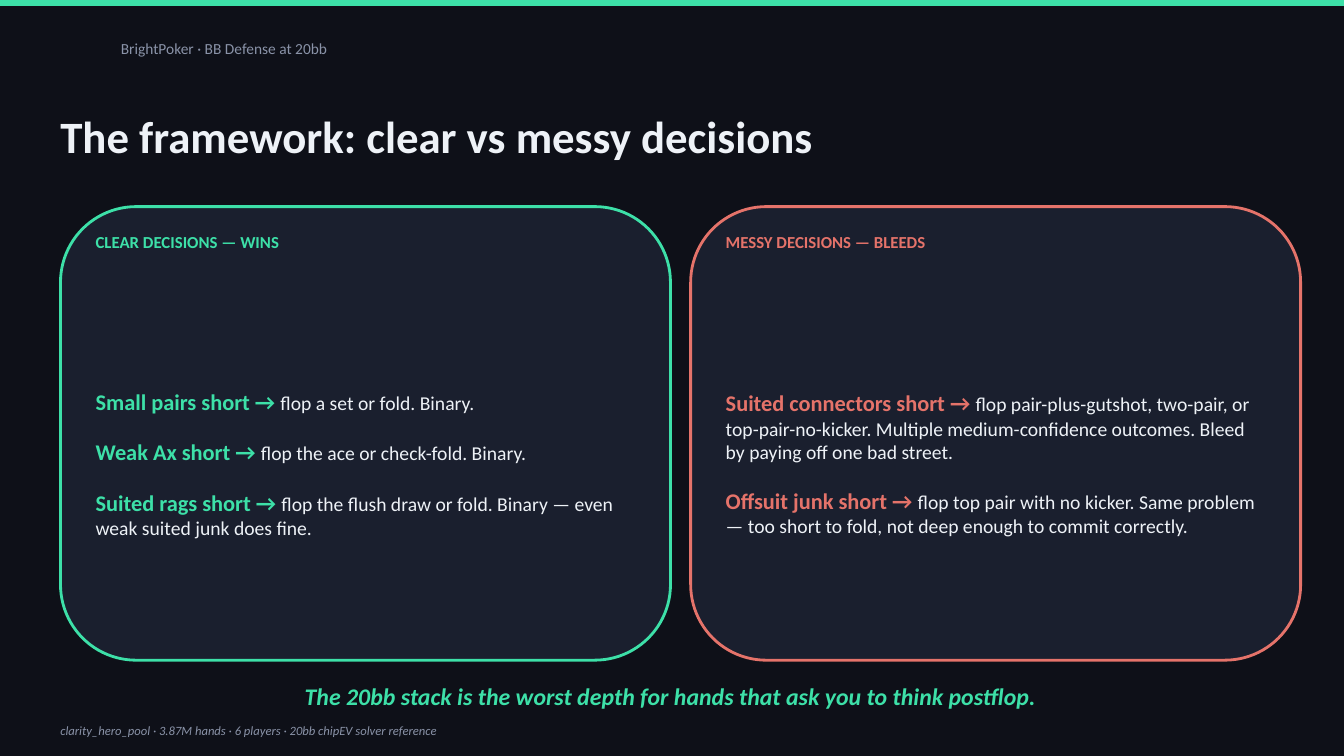
from pptx import Presentation
from pptx.dml.color import RGBColor
from pptx.enum.shapes import MSO_SHAPE
from pptx.enum.text import MSO_ANCHOR, PP_ALIGN
from pptx.util import Inches, Pt

RECTANGLE = MSO_SHAPE.RECTANGLE
ROUNDED = MSO_SHAPE.ROUNDED_RECTANGLE
MIDDLE = MSO_ANCHOR.MIDDLE
LEFT, CENTER = PP_ALIGN.LEFT, PP_ALIGN.CENTER

FONT = "Calibri"
BACKGROUND, CARD, LIGHT, MUTED = "0E1018", "1A1F2E", "EEF2F7", "8A93A8"
GREEN, RED = "3DE0A8", "E5736A"
PAGE_WIDTH = 13.33
CARD_LEFT, CARD_TOP, CARD_WIDTH, CARD_HEIGHT, CARD_GAP = 0.6, 2.05, 6.05, 4.5, 0.2

CARDS = [
    (GREEN, "CLEAR DECISIONS — WINS", [
        ("Small pairs short → ", "flop a set or fold. Binary."),
        ("Weak Ax short → ", "flop the ace or check-fold. Binary."),
        ("Suited rags short → ",
         "flop the flush draw or fold. Binary — even weak suited junk does fine."),
    ]),
    (RED, "MESSY DECISIONS — BLEEDS", [
        ("Suited connectors short → ",
         "flop pair-plus-gutshot, two-pair, or top-pair-no-kicker. Multiple "
         "medium-confidence outcomes. Bleed by paying off one bad street."),
        ("Offsuit junk short → ",
         "flop top pair with no kicker. Same problem — too short to fold, "
         "not deep enough to commit correctly."),
    ]),
]


def color(value):
    return RGBColor.from_string(value)


def add_panel(page, kind, left, top, width, height, fill, line=None):
    panel = page.shapes.add_shape(
        kind, Inches(left), Inches(top), Inches(width), Inches(height))
    panel.shadow.inherit = False
    panel.fill.solid()
    panel.fill.fore_color.rgb = color(fill)
    if line:
        panel.line.color.rgb = color(line)
        panel.line.width = Pt(2)
    else:
        panel.line.fill.background()


def add_box(page, left, top, width, height):
    """Add a wrapping, vertically centred text box and return its text frame."""
    box = page.shapes.add_textbox(
        Inches(left), Inches(top), Inches(width), Inches(height))
    frame = box.text_frame
    frame.word_wrap = True
    frame.vertical_anchor = MIDDLE
    return frame


def add_span(para, text, size, tint, bold=False, italic=False):
    span = para.add_run()
    span.text = text
    span.font.name = FONT
    span.font.size = Pt(size)
    span.font.bold = bold
    span.font.italic = italic
    span.font.color.rgb = color(tint)


def add_line(page, left, top, width, height, text, size, tint,
             bold=False, italic=False, align=LEFT):
    """Add a text box holding one line in a single style."""
    para = add_box(page, left, top, width, height).paragraphs[0]
    para.alignment = align
    add_span(para, text, size, tint, bold, italic)


def add_card(page, left, accent, heading, points):
    add_panel(page, ROUNDED, left, CARD_TOP, CARD_WIDTH, CARD_HEIGHT, CARD, accent)
    text_left = left + 0.25
    add_line(page, text_left, 2.2, 5.5, 0.4, heading, 12, accent, bold=True)
    frame = add_box(page, text_left, 2.7, 5.5, 3.8)
    for index, (lead, detail) in enumerate(points):
        para = frame.add_paragraph() if index else frame.paragraphs[0]
        if index:
            para.space_before = Pt(17)
        add_span(para, lead, 16, accent, bold=True)
        add_span(para, detail, 14, LIGHT)


def main():
    deck = Presentation()
    deck.slide_width, deck.slide_height = Inches(PAGE_WIDTH), Inches(7.5)
    page = deck.slides.add_slide(deck.slide_layouts[6])
    page.background.fill.solid()
    page.background.fill.fore_color.rgb = color(BACKGROUND)

    add_panel(page, RECTANGLE, 0, 0, PAGE_WIDTH, 0.06, GREEN)
    add_line(page, 1.1, 0.25, 8, 0.45, "BrightPoker · BB Defense at 20bb", 11, MUTED)
    add_line(page, 0.5, 7.05, 12.3, 0.4,
             "clarity_hero_pool · 3.87M hands · 6 players · 20bb chipEV solver reference",
             9, MUTED, italic=True)
    add_line(page, 0.5, 1, 12.3, 0.7, "The framework: clear vs messy decisions",
             32, LIGHT, bold=True)
    for index, (accent, heading, points) in enumerate(CARDS):
        left = CARD_LEFT + index * (CARD_WIDTH + CARD_GAP)
        add_card(page, left, accent, heading, points)
    add_line(page, 0.5, 6.65, 12.3, 0.5,
             "The 20bb stack is the worst depth for hands that ask you to think postflop.",
             17, GREEN, bold=True, italic=True, align=CENTER)
    deck.save("out.pptx")


if __name__ == "__main__":
    main()
